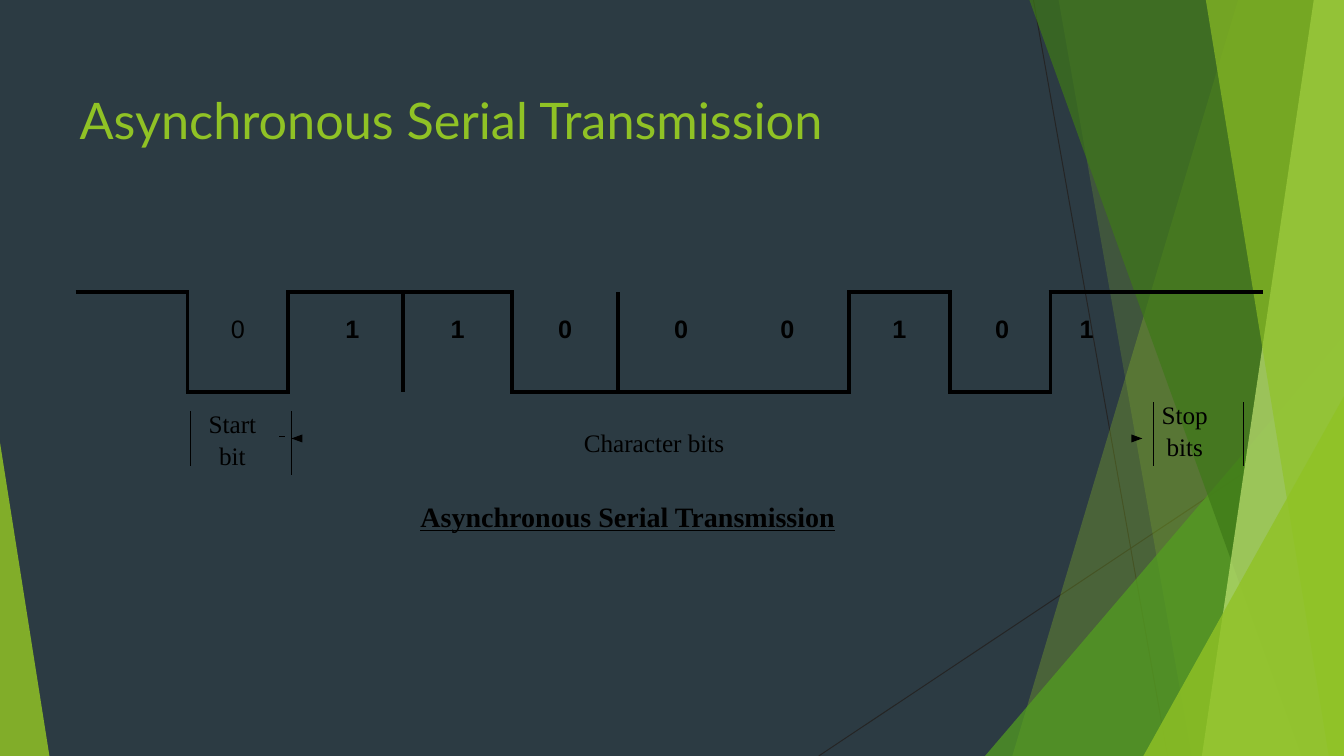
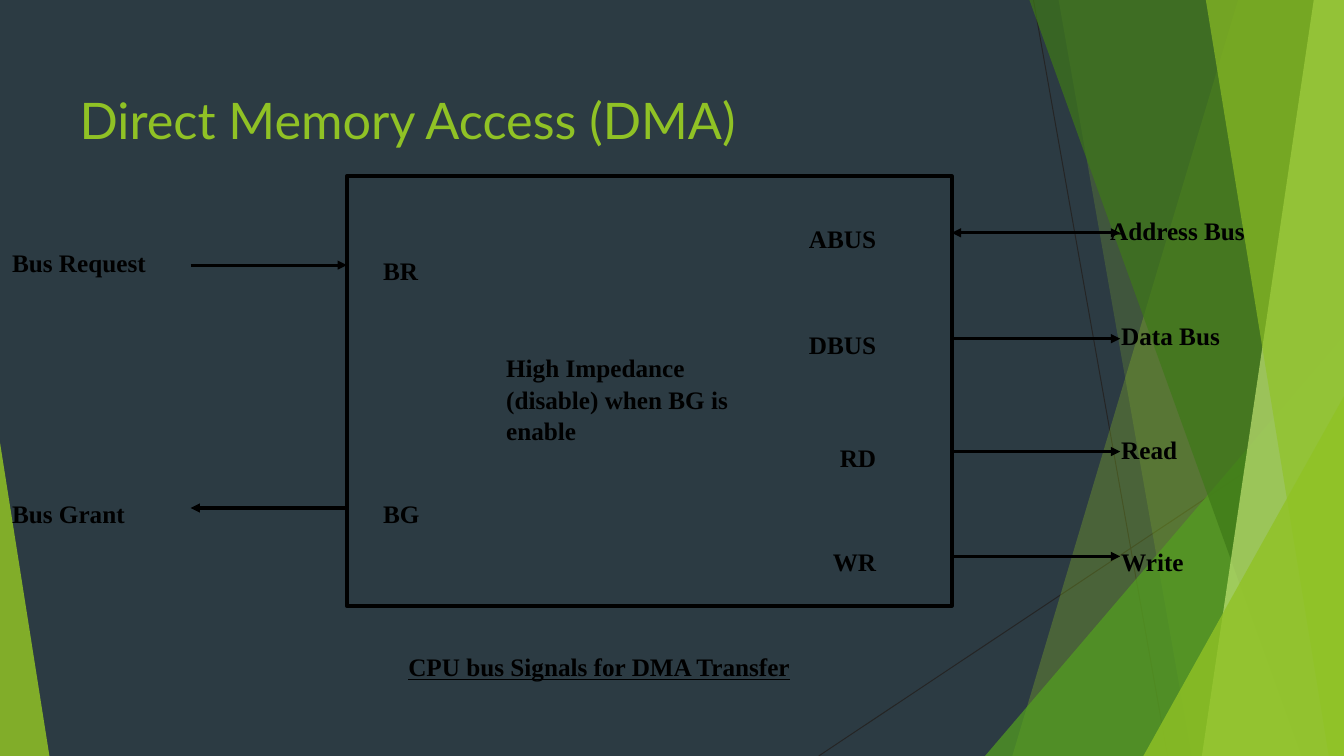
from pptx import Presentation
from pptx.dml.color import RGBColor as RGB
from pptx.enum.shapes import MSO_CONNECTOR as Conn, MSO_SHAPE as Shape
from pptx.enum.text import MSO_ANCHOR as Anchor, PP_ALIGN as Align
from pptx.oxml.ns import qn
from pptx.util import Inches, Pt
from lxml.etree import SubElement as Sub

# Shared look
W, H = 13.33, 7.5
HUE = dict(back="2C3B43", lime="90C225", green="539F20", dark="3E7818",
           pale="C0E374", hair="252525", ink="000000")
SERIF, SANS, HEAD = "Times New Roman", "Arial", "Lato"

# Background facets: colour, opacity in percent, corners
FACETS = [
    ("lime", 30, [(W, 0), (12.28, 0), (10.04, H), (W, H)]),
    ("lime", 20, [(W, 0), (10.5, 0), (11.82, H), (W, H)]),
    ("green", 72, [(W, 3.33), (9.77, H), (W, H)]),
    ("dark", 70, [(W, 0), (10.21, 0), (12.91, H), (W, H)]),
    ("pale", 70, [(W, 0), (13.03, 0), (11.92, H), (W, H)]),
    ("lime", 65, [(W, 0), (11.96, 0), (13.18, H), (W, H)]),
    ("lime", 80, [(W, 3.93), (11.34, H), (W, H)]),
    ("lime", 85, [(0, 4.39), (0, H), (0.49, H)]),
]
HAIRS = [(10.25, 0, 11.58, H), (W, 4.03, 8.12, H)]

# Serial slide: bit, column width, left margin, alignment
MID, LEFT, RIGHT = Align.CENTER, Align.LEFT, Align.RIGHT
BITS = [
    ("", 1.11, 0, MID), ("0", 1, 0, MID), ("1", 1.14, 0.13, MID),
    ("1", 1.08, 0, MID), ("0", 1.05, 0, MID), ("0", 1.21, 0.04, MID),
    ("0", 1.08, 0.4, LEFT), ("1", 1, 0, MID), ("0", 1, 0.04, MID),
    ("1", 2.11, 0.29, LEFT),
]
SPLITS = {3, 5}  # columns with a divider though the level stays
TICKS = [(1.89, 4.08, 0.54), (2.89, 4.08, 0.63),
         (11.44, 3.99, 0.63), (12.33, 3.99, 0.63)]
HEADS = [[(3, 4.31), (2.89, 4.35), (3, 4.39)],
         [(11.22, 4.31), (11.33, 4.35), (11.22, 4.39)]]
NOTES = [("Start\nbit", 1.9, 4.03, 0.81, MID),
         ("Stop\nbits", 11.44, 3.94, 0.62, MID),
         ("Character bits", 5.79, 4.21, 1.9, LEFT)]

# DMA slide: pin, arrow height, outer label, its left and top
BOX = (3.44, 1.75, 6, 4.26)
OUTS = [("ABUS", 2.31, "Address Bus", 11.01, 2.11),
        ("DBUS", 3.36, "Data Bus", 11.12, 3.15),
        ("RD", 4.48, "Read", 11.12, 4.28),
        ("WR", 5.52, "Write", 11.12, 5.4)]
INS = [("BR", 2.63, "Bus Request", 2.43, 2.51),
       ("BG", 5.04, "Bus Grant", 4.92, 4.92)]


def ink(key):
    return RGB.from_string(HUE[key])


def write(frame, text, size=18, font=SERIF, hue="ink", bold=False,
          under=False, align=LEFT, lead=1.05):
    frame.word_wrap = True
    frame.vertical_anchor = Anchor.TOP
    frame.margin_left = frame.margin_right = frame.margin_bottom = 0
    frame.margin_top = Inches(0.01)
    frame.text = text
    for para in frame.paragraphs:
        para.alignment, para.line_spacing = align, lead
        face = para.font
        face.size, face.name = Pt(size), font
        face.bold, face.underline = bold, under
        face.color.rgb = ink(hue)


def label(slide, text, x, y, w, h=0.33, **form):
    box = slide.shapes.add_textbox(*map(Inches, (x, y, w, h)))
    write(box.text_frame, text, **form)


def line(slide, x1, y1, x2, y2, width=0.75, hue="ink", ends=()):
    wire = slide.shapes.add_connector(
        Conn.STRAIGHT, *map(Inches, (x1, y1, x2, y2)))
    wire.line.width = Pt(width)
    wire.line.color.rgb = ink(hue)
    for end in ends:
        Sub(wire.line._get_or_add_ln(), qn(f"a:{end}End"), type="triangle")
    Sub(wire.element.spPr, qn("a:effectLst"))
    return wire


def poly(slide, spots, hue="ink", alpha=100):
    spots = [(Inches(x), Inches(y)) for x, y in spots]
    pen = slide.shapes.build_freeform(*spots[0])
    pen.add_line_segments(spots[1:], close=True)
    form = pen.convert_to_shape()
    form.shadow.inherit = False
    form.fill.solid()
    form.fill.fore_color.rgb = ink(hue)
    form.line.fill.background()
    if alpha < 100:
        tint = form.element.spPr.find(f".//{qn('a:srgbClr')}")
        Sub(tint, qn("a:alpha"), val=str(alpha * 1000))
    return form


def dress(slide, layout):
    """Put the background and its facets on the layout."""
    back = layout.background.fill
    back.solid()
    back.fore_color.rgb = ink("back")
    parts = [line(slide, *hair, width=0.72, hue="hair") for hair in HAIRS]
    parts += [poly(slide, spots, hue, alpha) for hue, alpha, spots in FACETS]
    for i, part in enumerate(parts):
        part.element.xpath(".//p:cNvPr")[0].set("id", str(100 + i))
        layout.shapes.element.insert(2 + i, part.element)


def title(slide, text):
    head = slide.shapes.title
    head.left, head.top, head.width, head.height = map(
        Inches, (0.79, 0.87, 11.45, 0.62))
    write(head.text_frame, text, size=36, font=HEAD, hue="lime", lead=1)


def edge(cell, sides):
    props = cell._tc.get_or_add_tcPr()
    for i, side in enumerate("LRTB"):
        rim = Sub(props, qn(f"a:ln{side}"), w=str(Pt(3)))
        if side in sides:
            fill = Sub(rim, qn("a:solidFill"))
            Sub(fill, qn("a:srgbClr"), val=HUE["ink"])
        else:
            Sub(rim, qn("a:noFill"))
        props.insert(i, rim)


def wave(slide):
    """Draw the bit train as a table whose borders form the signal."""
    wide = sum(bit[1] for bit in BITS)
    frame = slide.shapes.add_table(
        1, len(BITS), *map(Inches, (0.75, 2.9, wide, 0.99)))
    table = frame.table
    table.first_row = table.horz_banding = False
    table.rows[0].height = Inches(0.99)
    high = [bit[0] != "0" for bit in BITS]
    walls = {i for i in range(1, len(BITS)) if high[i] != high[i - 1]} | SPLITS
    for i, (bit, w, pad, align) in enumerate(BITS):
        table.columns[i].width = Inches(w)
        cell = table.cell(0, i)
        cell.fill.background()
        cell.margin_right = cell.margin_bottom = 0
        cell.margin_left, cell.margin_top = Inches(pad), Inches(0.23)
        cell.vertical_anchor = Anchor.TOP
        para = cell.text_frame.paragraphs[0]
        para.alignment = align
        if bit:
            run = para.add_run()
            run.text = bit
            run.font.size, run.font.name = Pt(18), SANS
            run.font.bold = i > 1
            run.font.color.rgb = ink("ink")
        edge(cell, ("T" if high[i] else "B") + "L" * (i in walls)
             + "R" * (i + 1 in walls))


def serial(slide):
    title(slide, "Asynchronous Serial Transmission")
    for x, y, tall in TICKS:
        line(slide, x, y, x, y + tall)
    line(slide, 2.77, 4.33, 2.83, 4.33, width=1)
    for spots in HEADS:
        poly(slide, spots)
    for text, x, y, w, align in NOTES:
        label(slide, text, x, y, w, align=align)
    label(slide, "Asynchronous Serial Transmission", 4.17, 4.93, 5.57,
          size=20, bold=True, under=True)
    wave(slide)


def dma(slide):
    title(slide, "Direct Memory Access (DMA)")
    x, _, w, _ = BOX
    cpu = slide.shapes.add_shape(Shape.RECTANGLE, *map(Inches, BOX))
    cpu.shadow.inherit = False
    cpu.fill.background()
    cpu.line.width = Pt(3)
    cpu.line.color.rgb = ink("ink")
    # Signals on the right
    for pin, y, text, left, top in OUTS:
        ends = ("head", "tail") if pin == "ABUS" else ("tail",)
        line(slide, x + w, y, 11.11, y, width=2.2, ends=ends)
        label(slide, pin, 7.69, y - 0.12, 1, bold=True, align=RIGHT)
        label(slide, text, left, top, 1.82, bold=True)
    # Handshake on the left
    for pin, y, text, top, low in INS:
        end = "tail" if pin == "BR" else "head"
        line(slide, 1.89, y, x, y, width=2.2, ends=(end,))
        label(slide, pin, 3.8, low, 0.5, bold=True)
        label(slide, text, 0.12, top, 1.8, bold=True)
    label(slide, "High Impedance (disable) when BG is enable",
          5.02, 3.47, 2.65, 0.93, bold=True)
    label(slide, "CPU bus Signals for DMA Transfer", 4.05, 6.44, 5.14,
          bold=True, under=True)


def main():
    deck = Presentation()
    deck.slide_width, deck.slide_height = Inches(W), Inches(H)
    layout = deck.slide_layouts[5]
    for i, draw in enumerate((serial, dma)):
        slide = deck.slides.add_slide(layout)
        if i == 0:
            dress(slide, layout)
        draw(slide)
    deck.save("out.pptx")


if __name__ == "__main__":
    main()
